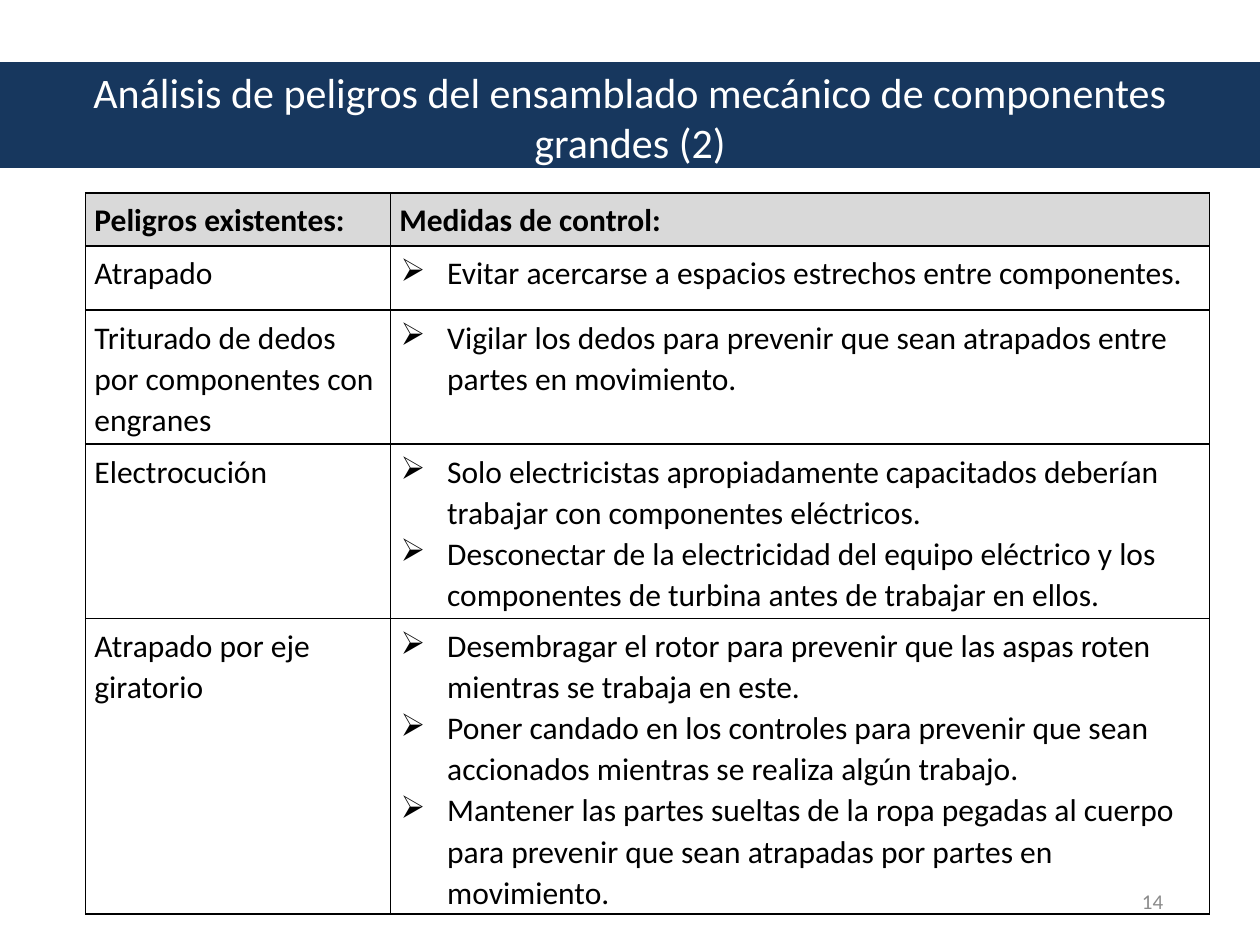
from lxml import etree
from pptx import Presentation
from pptx.dml.color import RGBColor
from pptx.enum.shapes import MSO_SHAPE
from pptx.enum.text import MSO_ANCHOR, PP_ALIGN
from pptx.oxml import parse_xml
from pptx.oxml.ns import nsdecls, qn
from pptx.util import Inches, Pt

RECTANGLE = MSO_SHAPE.RECTANGLE
MIDDLE = MSO_ANCHOR.MIDDLE
CENTER, RIGHT = PP_ALIGN.CENTER, PP_ALIGN.RIGHT

NAVY = RGBColor(0x17, 0x37, 0x5E)
WHITE = RGBColor(0xFF, 0xFF, 0xFF)
BLACK = RGBColor(0x00, 0x00, 0x00)
HEADER_GRAY = RGBColor(0xD9, 0xD9, 0xD9)
NUMBER_GRAY = RGBColor(0x8B, 0x8B, 0x8B)

FONT = "Calibri"
BORDER_WIDTH = Pt(0.96)
COLUMN_WIDTHS = (2.42, 6.5)
ROW_HEIGHTS = (0.37, 0.51, 0.91, 1.31, 1.98)

TITLE = "Análisis de peligros del ensamblado mecánico de componentes grandes (2)"
HEADERS = ("Peligros existentes:", "Medidas de control:")
HAZARDS = (
    ("Atrapado", ["Evitar acercarse a espacios estrechos entre componentes."]),
    ("Triturado de dedos por componentes con engranes", [
        "Vigilar los dedos para prevenir que sean atrapados entre partes en movimiento."]),
    ("Electrocución", [
        "Solo electricistas apropiadamente capacitados deberían trabajar con componentes eléctricos.",
        "Desconectar de la electricidad del equipo eléctrico y los componentes de turbina "
        "antes de trabajar en ellos."]),
    ("Atrapado por eje giratorio", [
        "Desembragar el rotor para prevenir que las aspas roten mientras se trabaja en este.",
        "Poner candado en los controles para prevenir que sean accionados mientras se "
        "realiza algún trabajo.",
        "Mantener las partes sueltas de la ropa pegadas al cuerpo para prevenir que sean "
        "atrapadas por partes en movimiento."]),
)


def set_font(para, size, color, bold=False):
    font = para.font
    font.name, font.size, font.bold = FONT, Pt(size), bold
    font.color.rgb = color


def add_band(page, top, width, height):
    band = page.shapes.add_shape(RECTANGLE, 0, Inches(top), Inches(width), Inches(height))
    band.shadow.inherit = False
    band.fill.solid()
    band.fill.fore_color.rgb = NAVY
    band.line.color.rgb = NAVY
    band.line.width = Pt(0.75)


def add_text(page, place, text, size, color, align):
    box = page.shapes.add_textbox(*map(Inches, place))
    frame = box.text_frame
    frame.word_wrap = True
    frame.vertical_anchor = MIDDLE
    para = frame.paragraphs[0]
    para.text = text
    para.alignment = align
    set_font(para, size, color)


def add_bullet(para):
    """Give the paragraph an arrowhead bullet with a hanging indent."""
    props = para._p.get_or_add_pPr()
    props.set("marL", str(Inches(0.38)))
    props.set("indent", str(Inches(-0.37)))
    color = etree.SubElement(props, qn("a:buClr"))
    etree.SubElement(color, qn("a:srgbClr"), val=str(BLACK))
    etree.SubElement(props, qn("a:buChar"), char="➢")


def add_borders(cell):
    props = cell._tc.get_or_add_tcPr()
    for side in ("lnL", "lnR", "lnT", "lnB"):
        props.append(parse_xml(
            f'<a:{side} {nsdecls("a")} w="{BORDER_WIDTH}"><a:solidFill>'
            f'<a:srgbClr val="{BLACK}"/></a:solidFill></a:{side}>'))


def fill_cell(cell, lines, header=False, bulleted=False):
    cell.margin_left = cell.margin_right = Inches(0.07)
    cell.margin_top = cell.margin_bottom = Inches(0.05)
    add_borders(cell)
    if header:
        cell.fill.solid()
        cell.fill.fore_color.rgb = HEADER_GRAY
    else:
        cell.fill.background()
    cell.text = "\n".join(lines)
    for para in cell.text_frame.paragraphs:
        para.line_spacing = 1.07
        if bulleted:
            add_bullet(para)
        set_font(para, 18, BLACK, bold=header)


def add_hazard_table(page, left, top):
    frame = page.shapes.add_table(
        len(ROW_HEIGHTS), len(COLUMN_WIDTHS), Inches(left), Inches(top),
        Inches(sum(COLUMN_WIDTHS)), Inches(sum(ROW_HEIGHTS)))
    table = frame.table
    table.horz_banding = False
    for column, width in zip(table.columns, COLUMN_WIDTHS):
        column.width = Inches(width)
    for row, height in zip(table.rows, ROW_HEIGHTS):
        row.height = Inches(height)
    for index, header in enumerate(HEADERS):
        fill_cell(table.cell(0, index), [header], header=True)
    for index, (hazard, measures) in enumerate(HAZARDS, start=1):
        fill_cell(table.cell(index, 0), [hazard])
        fill_cell(table.cell(index, 1), measures, bulleted=True)


def main():
    deck = Presentation()
    deck.slide_width, deck.slide_height = Inches(10), Inches(7.5)
    page = deck.slides.add_slide(deck.slide_layouts[6])
    add_band(page, 0.5, 10, 0.83)
    add_text(page, (0.5, 0.3, 9, 1.25), TITLE, 24, WHITE, CENTER)
    add_hazard_table(page, 0.68, 1.53)
    add_text(page, (7, 6.95, 2.33, 0.4), "14", 12, NUMBER_GRAY, RIGHT)
    deck.save("out.pptx")


if __name__ == "__main__":
    main()
